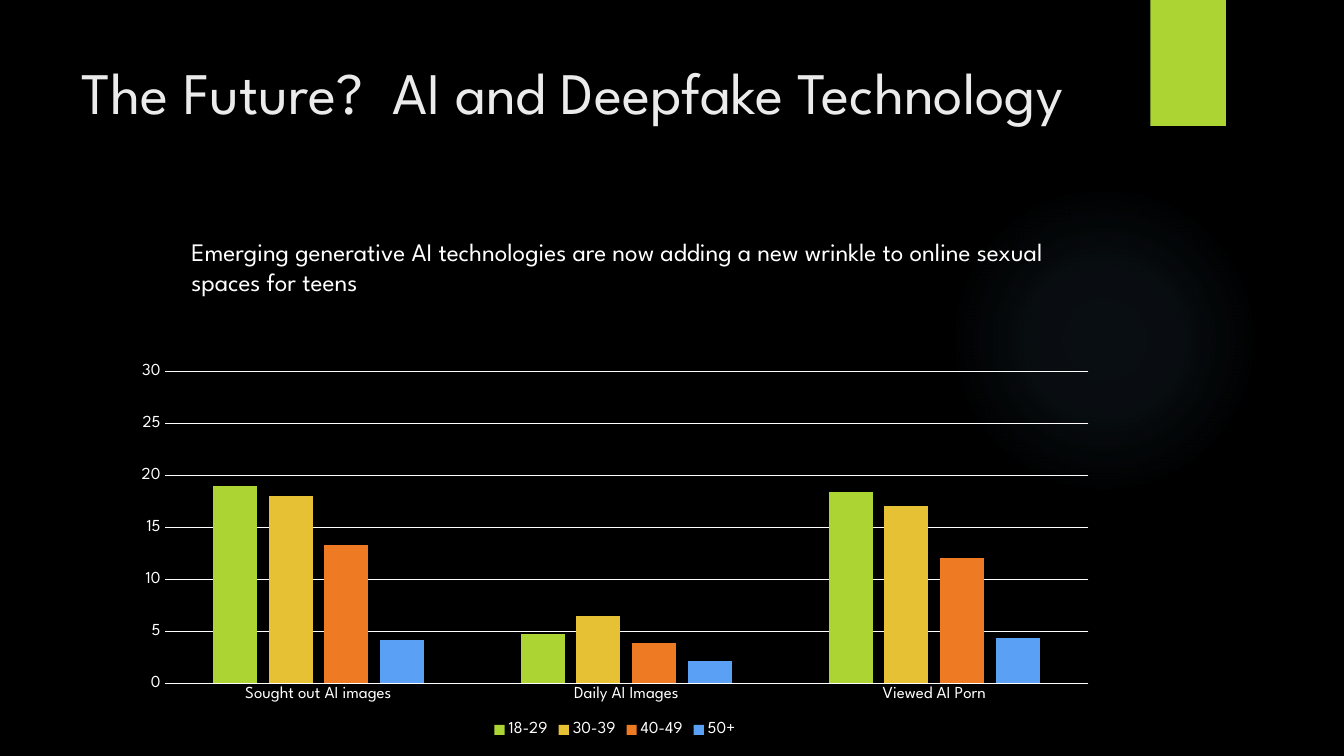
from lxml import etree
from pptx import Presentation
from pptx.chart.data import CategoryChartData
from pptx.dml.color import RGBColor
from pptx.enum.chart import XL_CHART_TYPE, XL_LEGEND_POSITION, XL_TICK_MARK
from pptx.enum.shapes import MSO_SHAPE
from pptx.enum.text import MSO_ANCHOR, MSO_AUTO_SIZE, PP_ALIGN
from pptx.oxml import parse_xml
from pptx.oxml.ns import nsdecls, qn
from pptx.util import Inches, Pt

FONT = "League Spartan"
WHITE = "FFFFFF"
LIME = "ACD433"
GLOW_BLUE = "7AC4F0"
GLOW_STOPS = [(0, 7), (36, 6), (69, 0)]  # position and opacity, in percent

CATEGORIES = ["Sought out AI images", "Daily AI Images", "Viewed AI Porn"]
AGE_GROUPS = [
    ("18-29", LIME, (19, 4.7, 18.4)),
    ("30-39", "E6C133", (18, 6.5, 17.1)),
    ("40-49", "EF7A24", (13.3, 3.9, 12)),
    ("50+", "5AA0F5", (4.2, 2.1, 4.4)),
]


def color(hex_string):
    return RGBColor.from_string(hex_string)


def box(left, top, width, height):
    return Inches(left), Inches(top), Inches(width), Inches(height)


def style_font(font, size, hex_string=WHITE):
    font.name = FONT
    font.size = Pt(size)
    font.bold = False
    font.color.rgb = color(hex_string)


def style_line(line, hex_string=WHITE, width=0.75):
    line.color.rgb = color(hex_string)
    line.width = Pt(width)


def add_plain_shape(slide, preset, bounds, hex_string):
    shape = slide.shapes.add_shape(preset, *bounds)
    shape.shadow.inherit = False
    shape.fill.solid()
    shape.fill.fore_color.rgb = color(hex_string)
    shape.line.fill.background()
    return shape


def add_glow(slide, bounds):
    """Add a circle that fades out from its centre."""
    glow = add_plain_shape(slide, MSO_SHAPE.OVAL, bounds, GLOW_BLUE)
    gradient = parse_xml(
        f'<a:gradFill {nsdecls("a")} rotWithShape="1"><a:gsLst/>'
        '<a:path path="circle">'
        '<a:fillToRect l="50000" t="50000" r="50000" b="50000"/>'
        '</a:path></a:gradFill>'
    )
    for position, opacity in GLOW_STOPS:
        stop = etree.SubElement(gradient[0], qn("a:gs"), pos=str(position * 1000))
        stop_color = etree.SubElement(stop, qn("a:srgbClr"), val=GLOW_BLUE)
        etree.SubElement(stop_color, qn("a:alpha"), val=str(opacity * 1000))
    properties = glow.element.spPr
    properties.replace(properties.find(qn("a:solidFill")), gradient)


def set_title(slide, bounds, text):
    title = slide.shapes.title
    title.left, title.top, title.width, title.height = bounds
    frame = title.text_frame
    frame.text = text
    frame.auto_size = MSO_AUTO_SIZE.NONE
    frame.vertical_anchor = MSO_ANCHOR.TOP
    paragraph = frame.paragraphs[0]
    paragraph.alignment = PP_ALIGN.LEFT
    style_font(paragraph.font, 42, "EBEBEB")


def add_statement(slide, bounds, text):
    frame = slide.shapes.add_textbox(*bounds).text_frame
    frame.word_wrap = True
    frame.auto_size = MSO_AUTO_SIZE.SHAPE_TO_FIT_TEXT
    frame.text = text
    style_font(frame.paragraphs[0].font, 18)


def add_age_chart(slide, bounds):
    data = CategoryChartData()
    data.categories = CATEGORIES
    for name, _, values in AGE_GROUPS:
        data.add_series(name, values)
    chart = slide.shapes.add_chart(
        XL_CHART_TYPE.COLUMN_CLUSTERED, *bounds, data
    ).chart
    chart.has_title = False
    style_font(chart.font, 10)

    plot = chart.plots[0]
    plot.vary_by_categories = False
    plot.gap_width = 219
    plot.overlap = -27
    for series, (_, hex_string, _) in zip(plot.series, AGE_GROUPS):
        series.format.fill.solid()
        series.format.fill.fore_color.rgb = color(hex_string)

    for axis in (chart.category_axis, chart.value_axis):
        axis.major_tick_mark = XL_TICK_MARK.NONE
        axis.minor_tick_mark = XL_TICK_MARK.NONE
        style_font(axis.tick_labels.font, 12)
    style_line(chart.category_axis.format.line)

    value_axis = chart.value_axis
    value_axis.minimum_scale = 0
    value_axis.maximum_scale = 30
    value_axis.major_unit = 5
    value_axis.format.line.fill.background()
    style_line(value_axis.major_gridlines.format.line)

    chart.has_legend = True
    chart.legend.position = XL_LEGEND_POSITION.BOTTOM
    chart.legend.include_in_layout = False
    style_font(chart.legend.font, 12)


def build_future_slide(presentation):
    slide = presentation.slides.add_slide(presentation.slide_layouts[5])
    slide.background.fill.solid()
    slide.background.fill.fore_color.rgb = color("000000")
    add_glow(slide, box(9.41, 1.83, 3.08, 3.08))
    add_plain_shape(slide, MSO_SHAPE.RECTANGLE, box(11.41, 0, 0.75, 1.25), LIME)
    set_title(slide, box(0.71, 0.5, 10.29, 1.53),
              "The Future?  AI and Deepfake Technology")
    add_age_chart(slide, box(1.21, 3.53, 9.78, 3.83))
    add_statement(slide, box(1.8, 2.29, 9.04, 0.71),
                  "Emerging generative AI technologies are now adding a new "
                  "wrinkle to online sexual spaces for teens")


def main():
    presentation = Presentation()
    presentation.slide_width = Inches(13.33)
    presentation.slide_height = Inches(7.5)
    build_future_slide(presentation)
    presentation.save("out.pptx")


if __name__ == "__main__":
    main()
